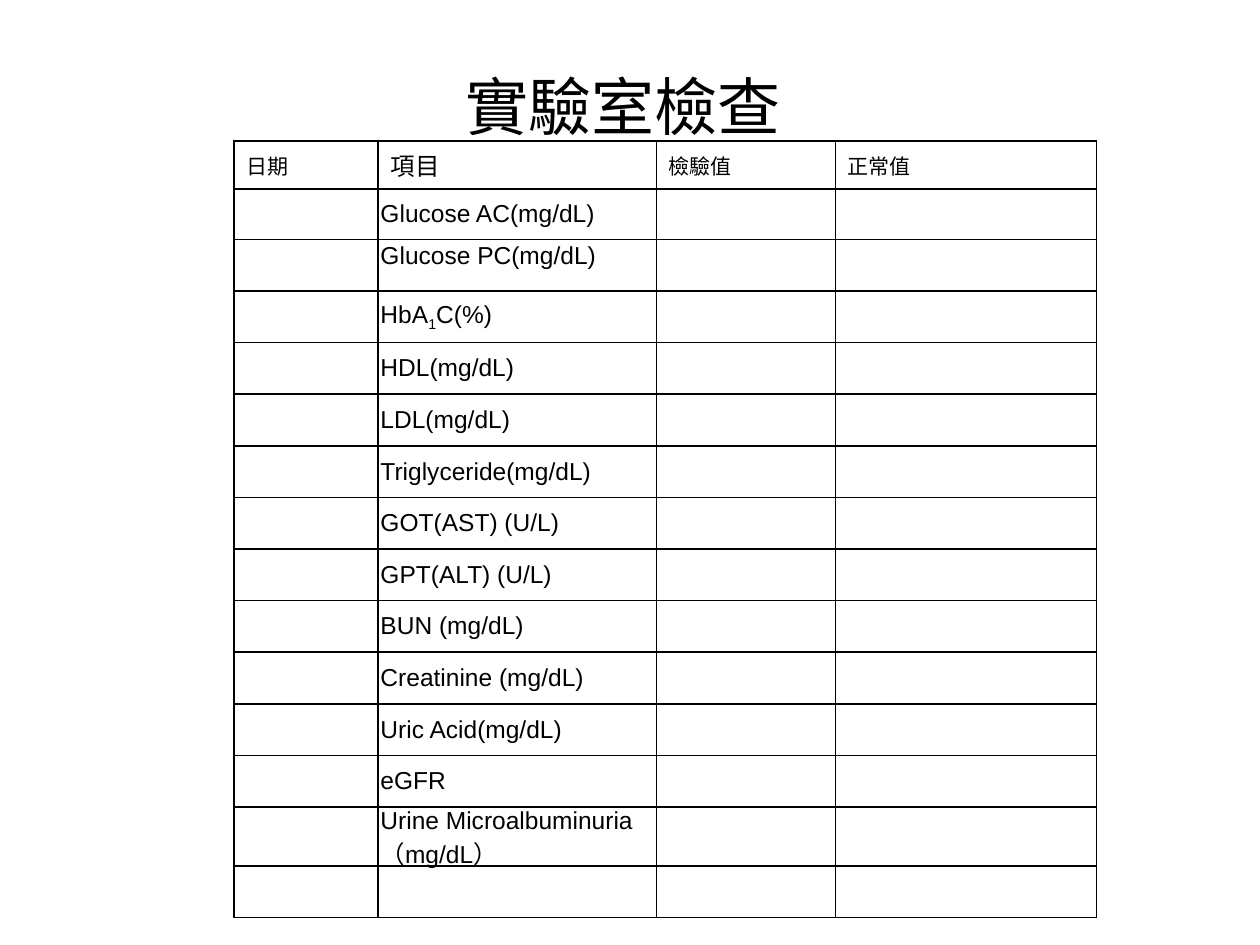
from lxml import etree
from pptx import Presentation
from pptx.dml.color import RGBColor
from pptx.enum.text import MSO_ANCHOR, PP_ALIGN
from pptx.oxml.ns import qn
from pptx.util import Cm, Pt

MIDDLE, TOP = MSO_ANCHOR.MIDDLE, MSO_ANCHOR.TOP
LEFT, CENTER, JUSTIFY = PP_ALIGN.LEFT, PP_ALIGN.CENTER, PP_ALIGN.JUSTIFY
BLACK = "000000"
BLANK_LAYOUT = 6
BORDER_SIDES = ("lnL", "lnR", "lnT", "lnB")

COLUMN_WIDTHS = (2.9, 5.61, 3.61, 5.26)
HEADER_HEIGHT, FIRST_HEIGHT, ROW_HEIGHT = 0.97, 0.71, 1.04
HEADERS = (("日期", 12), ("項目", 14), ("檢驗值", 12), ("正常值", 12))
GLUCOSE_TESTS = (("Glucose AC(mg/dL)", MIDDLE), ("Glucose PC(mg/dL)", TOP))
OTHER_TESTS = (
    "HDL(mg/dL)",
    "LDL(mg/dL)",
    "Triglyceride(mg/dL)",
    "GOT(AST) (U/L)",
    "GPT(ALT) (U/L)",
    "BUN (mg/dL)",
    "Creatinine (mg/dL)",
    "Uric Acid(mg/dL)",
    "eGFR",
)
URINE_TEST = "Urine Microalbuminuria（mg/dL）"


def color(value):
    return RGBColor.from_string(value)


def add_run(paragraph, text, size, font="Arial", baseline=None):
    run = paragraph.add_run()
    run.text = text
    run.font.name = font
    run.font.size = Pt(size)
    run.font.color.rgb = color(BLACK)
    if baseline is not None:
        run.font._element.set("baseline", str(baseline))


def add_title(slide, text):
    shape = slide.shapes.add_textbox(Cm(1.27), Cm(0.76), Cm(22.86), Cm(2.74))
    frame = shape.text_frame
    frame.word_wrap = True
    frame.vertical_anchor = MIDDLE
    paragraph = frame.paragraphs[0]
    paragraph.alignment = CENTER
    add_run(paragraph, text, 36, "Calibri")


def set_borders(cell):
    properties = cell._tc.get_or_add_tcPr()
    for position, side in enumerate(BORDER_SIDES):
        line = etree.Element(qn(f"a:{side}"), w=str(Pt(1)))
        fill = etree.SubElement(line, qn("a:solidFill"))
        etree.SubElement(fill, qn("a:srgbClr"), val=BLACK)
        properties.insert(position, line)


def add_grid(slide, row_heights):
    shape = slide.shapes.add_table(
        len(row_heights), len(COLUMN_WIDTHS),
        Cm(4.72), Cm(2.84), Cm(sum(COLUMN_WIDTHS)), Cm(sum(row_heights)),
    )
    table = shape.table
    table.first_row = False
    table.horz_banding = False
    for column, width in zip(table.columns, COLUMN_WIDTHS):
        column.width = Cm(width)
    for row, height in zip(table.rows, row_heights):
        row.height = Cm(height)
    for cell in table.iter_cells():
        cell.fill.background()
        set_borders(cell)
    return table


def fill_header(table):
    for column, (text, size) in enumerate(HEADERS):
        cell = table.cell(0, column)
        cell.vertical_anchor = MIDDLE
        add_run(cell.text_frame.paragraphs[0], text, size)


def fill_test(cell, runs, anchor=MIDDLE, alignment=JUSTIFY, vertical_margin=0):
    cell.vertical_anchor = anchor
    cell.margin_left = cell.margin_right = Cm(0.05)
    cell.margin_top = cell.margin_bottom = Cm(vertical_margin)
    paragraph = cell.text_frame.paragraphs[0]
    paragraph.alignment = alignment
    for text, baseline in runs:
        add_run(paragraph, text, 14, baseline=baseline)


def fill_tests(table):
    for row, (name, anchor) in enumerate(GLUCOSE_TESTS, 1):
        fill_test(table.cell(row, 1), [(name, None)], anchor, LEFT, 0.05)
    hemoglobin = [("HbA", None), ("1", -25000), ("C(%)", 0)]
    fill_test(table.cell(3, 1), hemoglobin)
    for row, name in enumerate(OTHER_TESTS, 4):
        fill_test(table.cell(row, 1), [(name, None)])
    fill_test(table.cell(13, 1), [(URINE_TEST, None)], alignment=LEFT)


def main():
    presentation = Presentation()
    presentation.slide_width = Cm(25.4)
    presentation.slide_height = Cm(19.05)
    slide = presentation.slides.add_slide(presentation.slide_layouts[BLANK_LAYOUT])
    add_title(slide, "實驗室檢查 ")
    table = add_grid(slide, [HEADER_HEIGHT, FIRST_HEIGHT] + [ROW_HEIGHT] * 13)
    fill_header(table)
    fill_tests(table)
    presentation.save("out.pptx")


if __name__ == "__main__":
    main()
